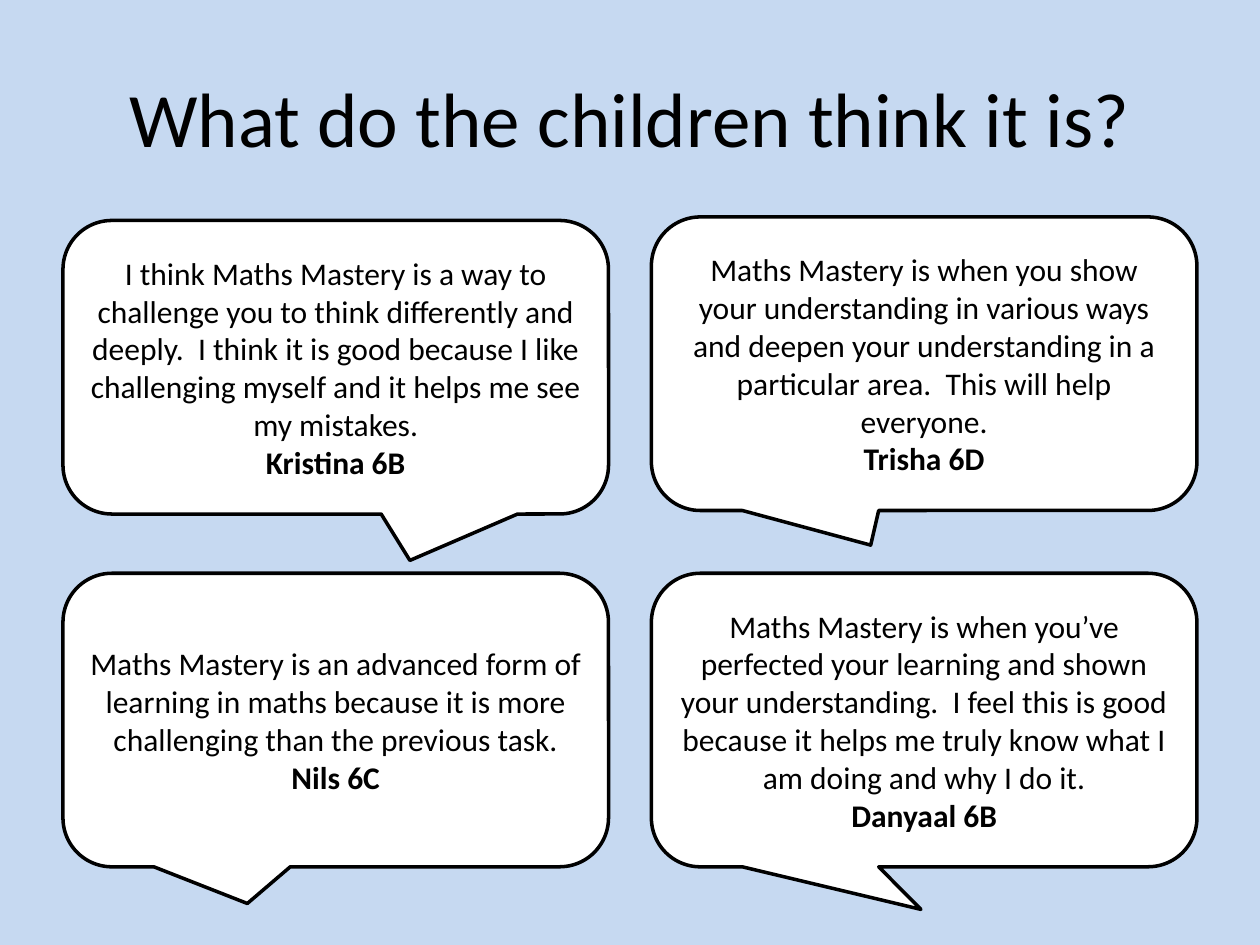
"""Build a slide of four speech bubbles with children's views on Maths Mastery."""
import pptx
import pptx.dml.color
import pptx.enum.shapes
import pptx.enum.text
import pptx.util

COLOURS = {"background": "C6D9F1", "bubble": "FFFFFF", "ink": "000000"}

QUOTES = [
    (0, 1, (-0.162, 0.625), "Nils 6C",
     "Maths Mastery is an advanced form of learning in maths because it is more "
     "challenging than the previous task."),
    (0, 0, (0.136, 0.658), "Kristina 6B",
     "I think Maths Mastery is a way to challenge you to think differently and deeply.  "
     "I think it is good because I like challenging myself and it helps me see my mistakes."),
    (1, 1, (-0.006, 0.645), "Danyaal 6B",
     "Maths Mastery is when you’ve perfected your learning and shown your understanding.  "
     "I feel this is good because it helps me truly know what I am doing and why I do it."),
    (1, -0.01, (-0.098, 0.618), "Trisha 6D",
     "Maths Mastery is when you show your understanding in various ways and deepen your "
     "understanding in a particular area.  This will help everyone."),
]


class BubbleSlide:
    """Hold the slide, its style and the grid of bubbles."""

    MARGIN, TOP = 0.5, 1.75
    COLUMN_STEP, ROW_STEP = 4.67, 2.8
    BUBBLE_WIDTH, BUBBLE_HEIGHT = 4.33, 2.33
    FONT = "Calibri"

    def __init__(self, presentation):
        self.slide = presentation.slides.add_slide(presentation.slide_layouts[6])
        self.paint(self.slide.background.fill, "background")

    def colour(self, name):
        return pptx.dml.color.RGBColor.from_string(COLOURS[name])

    def paint(self, fill, name):
        fill.solid()
        fill.fore_color.rgb = self.colour(name)

    def box(self, left, top, width, height):
        return [pptx.util.Inches(length) for length in (left, top, width, height)]

    def set_text(self, shape, lines):
        frame = shape.text_frame
        frame.word_wrap = True
        frame.vertical_anchor = pptx.enum.text.MSO_ANCHOR.MIDDLE
        frame.text = "\n".join(text for text, _ in lines)
        for paragraph, (_, formats) in zip(frame.paragraphs, lines):
            paragraph.alignment = pptx.enum.text.PP_ALIGN.CENTER
            font = paragraph.runs[0].font
            font.color.rgb = self.colour("ink")
            for name, value in {"name": self.FONT, **formats}.items():
                setattr(font, name, value)

    def title(self, text):
        width = self.COLUMN_STEP + self.BUBBLE_WIDTH
        shape = self.slide.shapes.add_textbox(*self.box(self.MARGIN, 0.3, width, 1.25))
        self.set_text(shape, [(text, {"size": pptx.util.Pt(44)})])

    def bubble(self, column, row, tail, child, quote):
        shape = self.slide.shapes.add_shape(
            pptx.enum.shapes.MSO_SHAPE.ROUNDED_RECTANGULAR_CALLOUT,
            *self.box(self.MARGIN + column * self.COLUMN_STEP,
                      self.TOP + row * self.ROW_STEP,
                      self.BUBBLE_WIDTH, self.BUBBLE_HEIGHT))
        shape.adjustments[0], shape.adjustments[1] = tail
        shape.shadow.inherit = False
        self.paint(shape.fill, "bubble")
        self.paint(shape.line.fill, "ink")
        shape.line.width = pptx.util.Pt(2)
        size = pptx.util.Pt(18)
        self.set_text(shape, [(quote, {"size": size}), (child, {"size": size, "bold": True})])


def main():
    presentation = pptx.Presentation()
    presentation.slide_width = pptx.util.Inches(10)
    presentation.slide_height = pptx.util.Inches(7.5)
    slide = BubbleSlide(presentation)
    slide.title("What do the children think it is?")
    for quote in QUOTES:
        slide.bubble(*quote)
    presentation.save("out.pptx")


if __name__ == "__main__":
    main()
